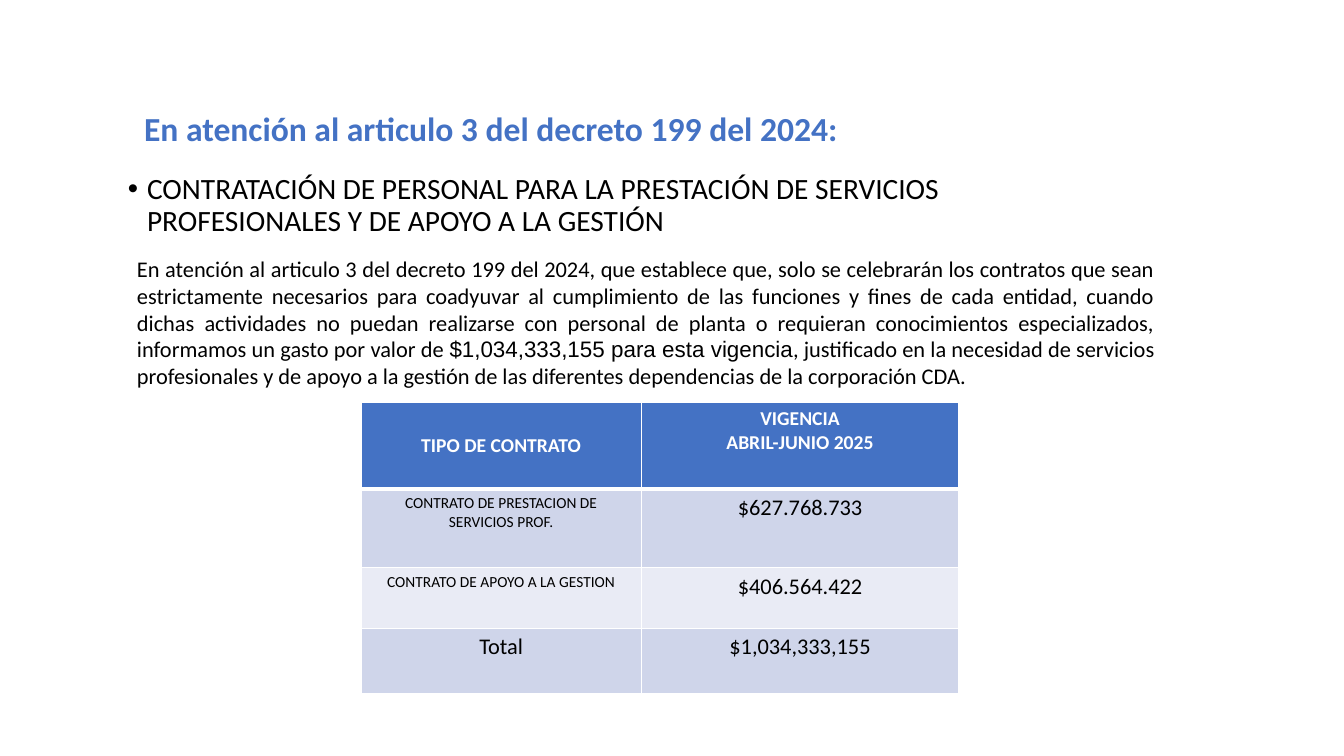
from lxml.etree import SubElement
from pptx import Presentation
from pptx.dml.color import RGBColor
from pptx.enum.text import MSO_ANCHOR, PP_ALIGN
from pptx.oxml.ns import qn
from pptx.util import Inches, Pt

COLORS = {"blue": "4472C4", "band": "CFD5EA", "light": "E9EBF5",
          "white": "FFFFFF", "black": "000000"}


class SlideBuilder:
    """Draws styled elements on one slide, placed in percent of its size."""

    def __init__(self, prs, font="Calibri"):
        self.prs = prs
        self.font = font
        self.s = prs.slides.add_slide(prs.slide_layouts[6])

    def x(self, share):
        return round(self.prs.slide_width * share / 100)

    def y(self, share):
        return round(self.prs.slide_height * share / 100)

    def style(self, r, size, color="black", bold=False, font=None):
        r.font.name = font or self.font
        r.font.size = Pt(size)
        r.font.bold = bold
        r.font.color.rgb = RGBColor.from_string(COLORS[color])

    def text(self, box, parts, size, align=PP_ALIGN.LEFT, wrap=True, color="black", bold=False):
        left, top, width, height = box
        sp = self.s.shapes.add_textbox(self.x(left), self.y(top), self.x(width), self.y(height))
        tf = sp.text_frame
        tf.word_wrap = wrap
        p = tf.paragraphs[0]
        p.alignment = align
        for words, font in parts:
            r = p.add_run()
            r.text = words
            self.style(r, size, color, bold, font)
        return p

    def bullet(self, box, words, size):
        p = self.text(box, [(words, None)], size)
        p.line_spacing = 0.9
        pPr = p._p.get_or_add_pPr()
        pPr.set("marL", str(Inches(0.19)))
        pPr.set("indent", str(Inches(-0.19)))
        SubElement(pPr, qn("a:buFont"), typeface="Arial")
        SubElement(pPr, qn("a:buChar"), char="•")

    def borders(self, cell, bottom):
        tcPr = cell._tc.get_or_add_tcPr()
        for side, width in (("L", 1), ("R", 1), ("T", 1), ("B", bottom)):
            ln = SubElement(tcPr, qn(f"a:ln{side}"), w=str(Pt(width)))
            fill = SubElement(ln, qn("a:solidFill"))
            SubElement(fill, qn("a:srgbClr"), val=COLORS["white"])

    def cell(self, cell, words, size, fill, header):
        self.borders(cell, 3 if header else 1)
        cell.fill.solid()
        cell.fill.fore_color.rgb = RGBColor.from_string(COLORS[fill])
        cell.text_frame.text = words
        for p in cell.text_frame.paragraphs:
            p.alignment = PP_ALIGN.CENTER
            for r in p.runs:
                self.style(r, size, "white" if header else "black", header)

    def table(self, left, top, widths, heights, rows, sizes):
        frame = self.s.shapes.add_table(len(rows), len(widths), self.x(left), self.y(top),
                                        self.x(sum(widths)), self.y(sum(heights)))
        table = frame.table
        for column, width in zip(table.columns, widths):
            column.width = self.x(width)
        for i, (row, height) in enumerate(zip(rows, heights)):
            table.rows[i].height = self.y(height)
            fill = "blue" if i == 0 else ("light", "band")[i % 2]
            for j, words in enumerate(row):
                self.cell(table.cell(i, j), words, sizes[i][j], fill, i == 0)
        table.cell(0, 0).vertical_anchor = MSO_ANCHOR.MIDDLE


def main():
    prs = Presentation()
    prs.slide_width, prs.slide_height = Inches(13.33), Inches(7.5)
    b = SlideBuilder(prs)
    b.bullet((8.78, 22.4, 70.5, 10.67),
             "CONTRATACIÓN DE PERSONAL PARA LA PRESTACIÓN DE SERVICIOS "
             "PROFESIONALES Y DE APOYO A LA GESTIÓN", 21)
    b.table(26.86, 53.2, (20.86, 23.63), (11.5, 10.4, 8, 8.6),
            [("TIPO DE CONTRATO", "VIGENCIA\nABRIL-JUNIO 2025"),
             ("CONTRATO DE PRESTACION DE SERVICIOS PROF.", "$627.768.733"),
             ("CONTRATO DE APOYO A LA GESTION", "$406.564.422"),
             ("Total", "$1,034,333,155")],
            [(14, 14), (11, 16), (11, 16), (16, 16)])
    b.text((9.45, 33.07, 77.2, 19.33),
           [("En atención al articulo 3 del decreto 199 del 2024, que establece que, solo se "
             "celebrarán los contratos que sean estrictamente necesarios para coadyuvar al "
             "cumplimiento de las funciones y fines de cada entidad, cuando dichas actividades "
             "no puedan realizarse con personal de planta o requieran conocimientos "
             "especializados, informamos un gasto por valor de ", None),
            ("$1,034,333,155 para esta vigencia", "Arial"),
            (", justificado en la necesidad de servicios profesionales y de apoyo a la gestión "
             "de las diferentes dependencias de la corporación CDA.", None)],
           16, PP_ALIGN.JUSTIFY)
    b.text((9.98, 13.6, 54.16, 6.67),
           [("En atención al articulo 3 del decreto 199 del 2024:", None)],
           24, wrap=False, color="blue", bold=True)
    prs.save("out.pptx")


if __name__ == "__main__":
    main()
